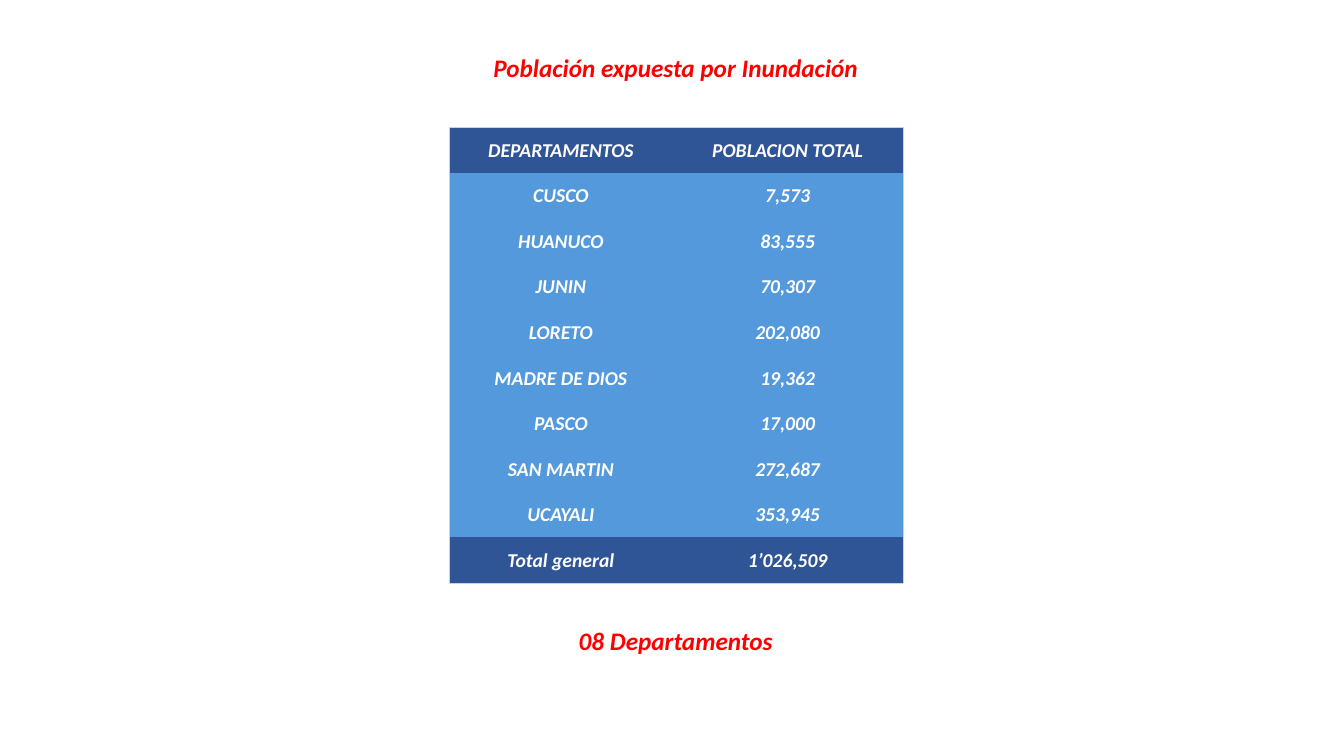
import pptx
import pptx.dml.color
import pptx.enum.text
import pptx.oxml.ns
import pptx.util
from lxml import etree
from pptx.util import Cm

RED, WHITE = "FF0000", "FFFFFF"
DARK_BLUE, LIGHT_BLUE, OUTLINE = "2F5597", "5399DB", "C4D5EB"


def color(hex_value):
    return pptx.dml.color.RGBColor.from_string(hex_value)


def write(frame, text, size, ink):
    """Fill a text frame with one centred bold italic Calibri line."""
    frame.text = text
    frame.vertical_anchor = pptx.enum.text.MSO_ANCHOR.MIDDLE
    line = frame.paragraphs[0]
    line.alignment = pptx.enum.text.PP_ALIGN.CENTER
    font = line.runs[0].font
    font.name, font.size = "Calibri", pptx.util.Pt(size)
    font.bold = font.italic = True
    font.color.rgb = color(ink)


presentation = pptx.Presentation()
presentation.slide_width, presentation.slide_height = Cm(33.87), Cm(19.05)
slide = presentation.slides.add_slide(presentation.slide_layouts[5])

heading = slide.shapes.title
heading.left, heading.top, heading.width, heading.height = Cm(12.14), Cm(1.19), Cm(9.78), Cm(1.02)
write(heading.text_frame, "Población expuesta por Inundación", 18, RED)
heading.text_frame.word_wrap = False
heading.text_frame.auto_size = pptx.enum.text.MSO_AUTO_SIZE.SHAPE_TO_FIT_TEXT

department_count = slide.shapes.add_textbox(Cm(14.12), Cm(15.62), Cm(5.82), Cm(1.02))
write(department_count.text_frame, "08 Departamentos", 18, RED)
department_count.text_frame.word_wrap = True
department_count.text_frame.auto_size = pptx.enum.text.MSO_AUTO_SIZE.SHAPE_TO_FIT_TEXT

population_rows = [
    ("DEPARTAMENTOS", "POBLACION TOTAL"),
    ("CUSCO", "7,573"),
    ("HUANUCO", "83,555"),
    ("JUNIN", "70,307"),
    ("LORETO", "202,080"),
    ("MADRE DE DIOS", "19,362"),
    ("PASCO", "17,000"),
    ("SAN MARTIN", "272,687"),
    ("UCAYALI", "353,945"),
    ("Total general", "1’026,509"),
]
last_row = len(population_rows) - 1
row_height = 1.15
population = slide.shapes.add_table(
    len(population_rows), 2, Cm(11.33), Cm(3.2), Cm(11.43), Cm(row_height * len(population_rows))
).table
population.horz_banding = False
population.last_row = True
population.columns[0].width, population.columns[1].width = Cm(5.61), Cm(5.82)

for row, values in enumerate(population_rows):
    population.rows[row].height = Cm(row_height)
    for column, value in enumerate(values):
        cell = population.cell(row, column)
        write(cell.text_frame, value, 14, WHITE)
        cell.vertical_anchor = pptx.enum.text.MSO_ANCHOR.MIDDLE
        cell.margin_left = cell.margin_right = cell.margin_top = Cm(0.03)
        cell.margin_bottom = 0

        # Only the outer edge of the table is outlined
        outer_sides = {"L": column == 0, "R": column == 1, "T": row == 0, "B": row == last_row}
        properties = cell._tc.get_or_add_tcPr()
        for side, is_outer in outer_sides.items():
            border = etree.SubElement(properties, pptx.oxml.ns.qn(f"a:ln{side}"), w="6350")
            if is_outer:
                paint = etree.SubElement(border, pptx.oxml.ns.qn("a:solidFill"))
                etree.SubElement(paint, pptx.oxml.ns.qn("a:srgbClr"), val=OUTLINE)
            else:
                etree.SubElement(border, pptx.oxml.ns.qn("a:noFill"))

        cell.fill.solid()
        cell.fill.fore_color.rgb = color(DARK_BLUE if row in (0, last_row) else LIGHT_BLUE)

presentation.save("out.pptx")
